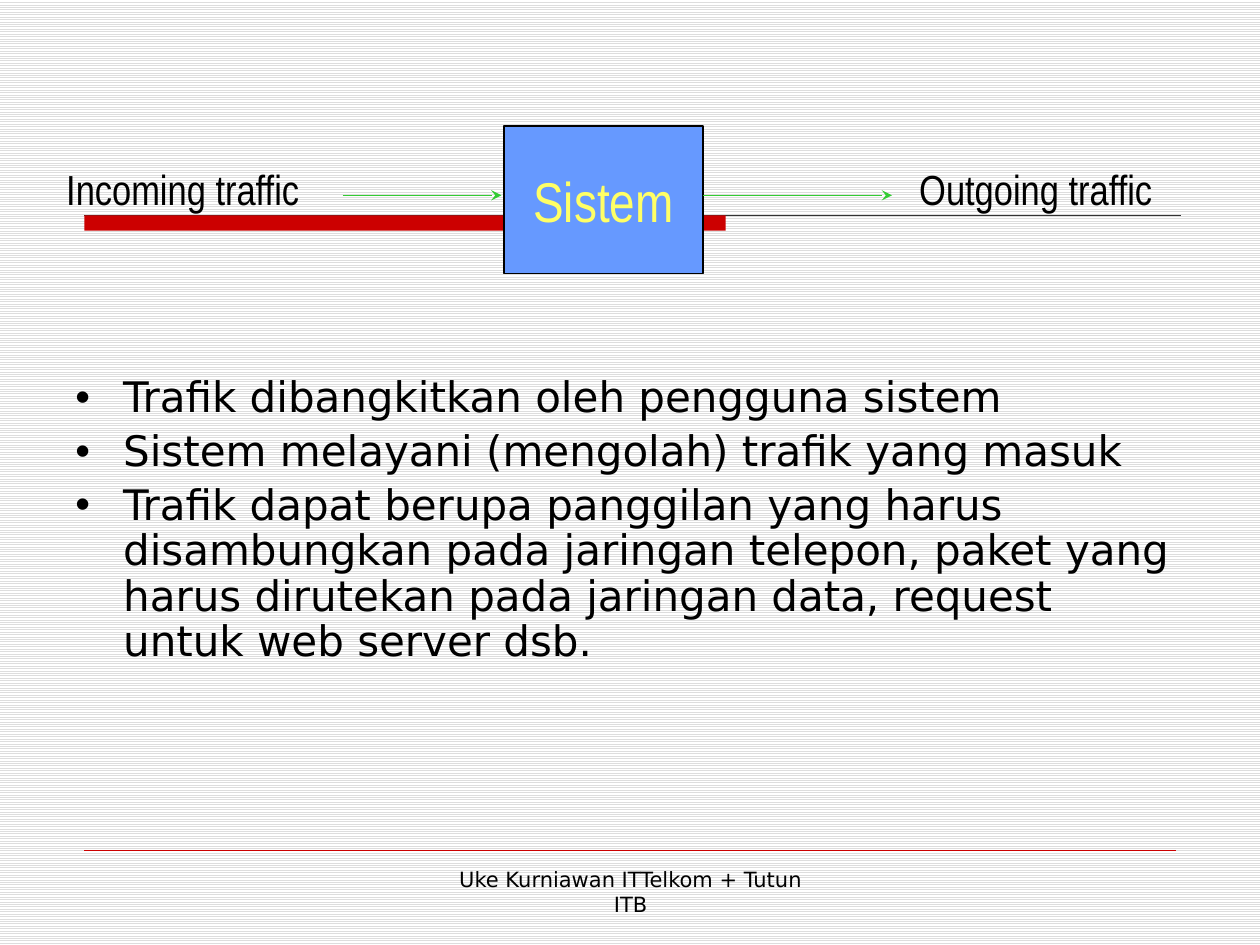
from lxml import etree
from pptx import Presentation
from pptx.dml.color import RGBColor
from pptx.enum.dml import MSO_PATTERN
from pptx.enum.shapes import MSO_CONNECTOR, MSO_SHAPE
from pptx.enum.text import MSO_ANCHOR, MSO_AUTO_SIZE, PP_ALIGN
from pptx.oxml.ns import qn
from pptx.util import Inches, Pt

RECTANGLE = MSO_SHAPE.RECTANGLE
STRAIGHT = MSO_CONNECTOR.STRAIGHT
CENTER = PP_ALIGN.CENTER
MIDDLE = MSO_ANCHOR.MIDDLE
GROW = MSO_AUTO_SIZE.SHAPE_TO_FIT_TEXT
STRIPES = MSO_PATTERN.LIGHT_HORIZONTAL

COLORS = {
    "stripe": "DDDDDD", "paper": "FFFFFF", "red": "CC0000", "rule": "333333",
    "system": "6699FF", "system_text": "FFFF66", "arrow": "33CC33", "text": "000000",
}
BODY_FONT, LABEL_FONT = "DejaVu Sans", "Arial Narrow"

POINTS = [
    "Trafik dibangkitkan oleh pengguna sistem",
    "Sistem melayani (mengolah) trafik yang masuk",
    "Trafik dapat berupa panggilan yang harus disambungkan pada jaringan telepon, "
    "paket yang harus dirutekan pada jaringan data, request untuk web server dsb.",
]


def rgb(name):
    return RGBColor.from_string(COLORS[name])


def style(paragraph, font, size, color="text"):
    paragraph.font.name = font
    paragraph.font.size = Pt(size)
    paragraph.font.color.rgb = rgb(color)


def add_line(slide, x1, y1, x2, y2, color, width, arrow=False):
    line = slide.shapes.add_connector(
        STRAIGHT, Inches(x1), Inches(y1), Inches(x2), Inches(y2))
    line.line.color.rgb = rgb(color)
    line.line.width = Pt(width)
    if arrow:
        etree.SubElement(line.line._get_or_add_ln(), qn("a:tailEnd"), type="stealth")
    etree.SubElement(line._element.spPr, qn("a:effectLst"))


def add_rectangle(slide, left, top, width, height, color):
    rectangle = slide.shapes.add_shape(
        RECTANGLE, Inches(left), Inches(top), Inches(width), Inches(height))
    rectangle.shadow.inherit = False
    rectangle.fill.solid()
    rectangle.fill.fore_color.rgb = rgb(color)
    rectangle.line.fill.background()
    return rectangle


def add_frame(slide, left, top, width, height, wrap=True):
    frame = slide.shapes.add_textbox(
        Inches(left), Inches(top), Inches(width), Inches(height)).text_frame
    frame.word_wrap = wrap
    return frame


def add_centered(slide, text, box, font, size, wrap=True):
    frame = add_frame(slide, *box, wrap=wrap)
    paragraph = frame.paragraphs[0]
    paragraph.text = text
    paragraph.alignment = CENTER
    style(paragraph, font, size)
    return frame


def add_backdrop(slide):
    fill = slide.background.fill
    fill.patterned()
    fill.pattern = STRIPES
    fill.fore_color.rgb = rgb("stripe")
    fill.back_color.rgb = rgb("paper")


def add_header_rule(slide, left, top, width):
    add_line(slide, left, top, left + width, top, "rule", 0.75)
    add_rectangle(slide, left, top, 5.09, 0.12, "red")


def add_traffic_diagram(slide, left, top):
    # System block
    block_left, block_width = left + 3.83, 1.58
    block = add_rectangle(slide, block_left, top, block_width, 1.17, "system")
    block.line.color.rgb = rgb("text")
    block.line.width = Pt(0.75)
    frame = block.text_frame
    frame.word_wrap = False
    frame.vertical_anchor = MIDDLE
    name = frame.paragraphs[0]
    name.text = "Sistem"
    name.alignment = CENTER
    style(name, LABEL_FONT, 32, "system_text")

    # Traffic arrows
    arrow_y, block_right = top + 0.55, block_left + block_width
    for start, end in ((left + 2.55, block_left - 0.02),
                       (block_right, block_right + 1.5)):
        add_line(slide, start, arrow_y, end, arrow_y, "arrow", 0.75, arrow=True)

    # Traffic labels
    for text, offset, width, wrap in (("Incoming traffic", 0, 2.56, True),
                                      ("Outgoing traffic", 7.02, 2.06, False)):
        label = add_centered(slide, text, (left + offset, top + 0.25, width, 0.5),
                             LABEL_FONT, 24, wrap)
        label.auto_size = GROW


def add_points(slide, left, top, width, height):
    frame = add_frame(slide, left, top, width, height)
    for index, text in enumerate(POINTS):
        point = frame.paragraphs[0] if index == 0 else frame.add_paragraph()
        point.text = text
        point.line_spacing = 0.9
        if index:
            point.space_before = Pt(4.8)
        properties = point._p.get_or_add_pPr()
        properties.set("marL", str(Inches(0.38)))
        properties.set("indent", str(-Inches(0.38)))
        etree.SubElement(properties, qn("a:buFont"), typeface="Arial")
        etree.SubElement(properties, qn("a:buChar"), char="•")
        style(point, BODY_FONT, 24)


def add_footer(slide, left, top, width):
    add_line(slide, left, top, left + width, top, "red", 0.25)
    add_centered(slide, "Uke Kurniawan ITTelkom + Tutun ITB",
                 (left + 2.75, top + 0.08, 3.17, 0.52), BODY_FONT, 12)


def main():
    deck = Presentation()
    deck.slide_width, deck.slide_height = Inches(10), Inches(7.5)
    slide = deck.slides.add_slide(deck.slide_layouts[6])
    add_backdrop(slide)
    add_header_rule(slide, 0.67, 1.71, 8.7)
    add_points(slide, 0.5, 2.94, 9, 3.21)
    add_traffic_diagram(slide, 0.17, 1)
    add_footer(slide, 0.67, 6.75, 8.66)
    deck.save("out.pptx")


if __name__ == "__main__":
    main()
